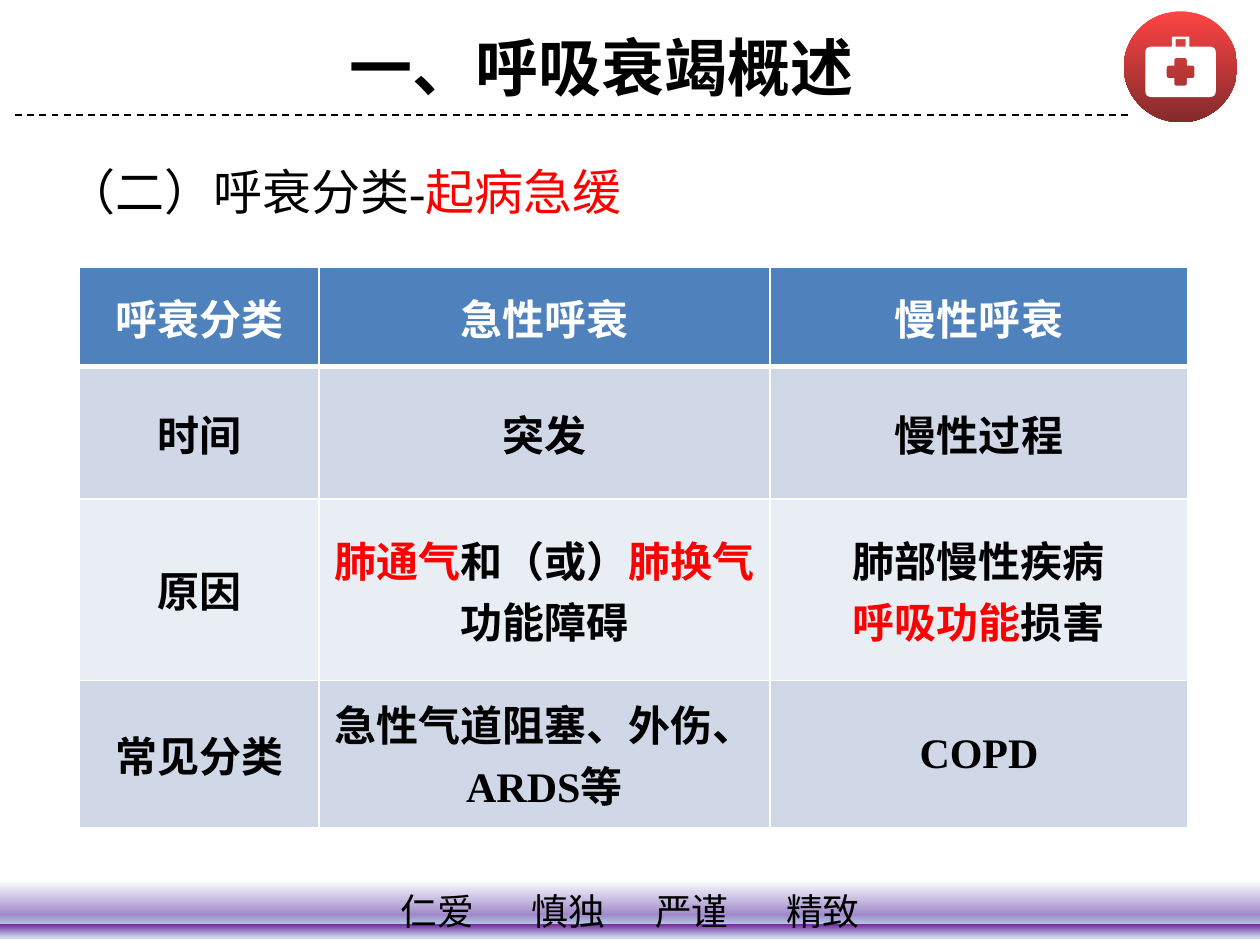
"""Build the slide that compares acute and chronic respiratory failure."""
import math
from dataclasses import dataclass

import lxml.etree
import pptx
import pptx.dml.color
import pptx.enum.dml
import pptx.enum.shapes
import pptx.enum.text
import pptx.oxml.ns
import pptx.util

Inches = pptx.util.Inches
RGBColor = pptx.dml.color.RGBColor
Align = pptx.enum.text.PP_ALIGN
Anchor = pptx.enum.text.MSO_ANCHOR
Shape = pptx.enum.shapes.MSO_SHAPE
qn = pptx.oxml.ns.qn

BLACK = RGBColor(0x00, 0x00, 0x00)
WHITE = RGBColor(0xFF, 0xFF, 0xFF)
RED = RGBColor(0xFF, 0x00, 0x00)
HEADER_BLUE = RGBColor(0x4F, 0x81, 0xBD)
BAND_DARK = RGBColor(0xD0, 0xD8, 0xE8)
BAND_LIGHT = RGBColor(0xE9, 0xED, 0xF4)
SERIF = "Times New Roman"
SANS = "Noto Sans CJK SC"

FOOTER_STOPS = [
    (0, RGBColor(0xF6, 0xF9, 0xFC)), (58, RGBColor(0x9F, 0x89, 0xC9)),
    (74, RGBColor(0xB0, 0xC6, 0xE1)), (75, RGBColor(0x70, 0x30, 0xA0)),
    (93, RGBColor(0xB7, 0xB5, 0xDE)), (96, RGBColor(0xC3, 0xCB, 0xE8)),
    (98, RGBColor(0xC9, 0xD6, 0xED)), (99, RGBColor(0xCD, 0xDF, 0xF1)),
    (100, RGBColor(0xCA, 0xD9, 0xEB)),
]
BADGE_STOPS = [(0, RGBColor(0xFE, 0x44, 0x44)), (100, RGBColor(0x83, 0x2B, 0x2B))]


@dataclass
class Span:
    text: str
    color: RGBColor = BLACK


@dataclass
class Corner:
    x: float
    y: float
    radius: float = 0


TABLE_ROWS = [
    [[[Span(text, WHITE)]] for text in ("呼衰分类", "急性呼衰", "慢性呼衰")],
    [[[Span(text)]] for text in ("时间", "突发", "慢性过程")],
    [
        [[Span("原因")]],
        [[Span("肺通气", RED), Span("和（或）"), Span("肺换气", RED), Span("功能障碍")]],
        [[Span("肺部慢性疾病")], [Span("呼吸功能", RED), Span("损害")]],
    ],
    [[[Span(text)]] for text in ("常见分类", "急性气道阻塞、外伤、ARDS等", "COPD")],
]
ROW_FILLS = [HEADER_BLUE, BAND_DARK, BAND_LIGHT, BAND_DARK]


def set_all(target, values: dict) -> None:
    for name, value in values.items():
        setattr(target, name, value)


def write(frame, paras: list, size: float, bold: bool = False,
          align=Align.CENTER, font: str = SERIF) -> None:
    for index, spans in enumerate(paras):
        para = frame.add_paragraph() if index else frame.paragraphs[0]
        para.alignment = align
        for item in spans:
            span = para.add_run()
            span.text = item.text
            set_all(span.font, {"size": pptx.util.Pt(size), "bold": bold, "name": font})
            span.font.color.rgb = item.color
            east = lxml.etree.SubElement(span.font._element, qn("a:ea"))
            east.set("typeface", SANS)


def fill_gradient(shape, stops: list) -> None:
    shape.shadow.inherit = False
    shape.line.fill.background()
    shape.fill.gradient()
    shape.fill.gradient_angle = 270
    stop_list = shape._element.spPr.find(".//" + qn("a:gsLst"))
    for old in list(stop_list):
        stop_list.remove(old)
    for position, color in stops:
        stop = lxml.etree.SubElement(stop_list, qn("a:gs"), pos=str(position * 1000))
        lxml.etree.SubElement(stop, qn("a:srgbClr"), val=str(color))


def add_footer(page) -> None:
    bar = page.shapes.add_shape(Shape.RECTANGLE, 0, Inches(7), Inches(10), Inches(0.45))
    fill_gradient(bar, FOOTER_STOPS)
    frame = bar.text_frame
    set_all(frame, {"margin_left": Inches(3.18), "margin_right": 0,
                    "vertical_anchor": Anchor.MIDDLE, "word_wrap": True})
    tabs = lxml.etree.SubElement(frame.paragraphs[0]._p.get_or_add_pPr(), qn("a:tabLst"))
    for position in (1.04, 2.02, 3.06):
        lxml.etree.SubElement(tabs, qn("a:tab"), pos=str(Inches(position)), algn="l")
    write(frame, [[Span("仁爱\t慎独\t严谨\t精致")]], 21, align=Align.LEFT, font=SANS)


def add_rule(page) -> None:
    rule = page.shapes.add_connector(pptx.enum.shapes.MSO_CONNECTOR.STRAIGHT,
                                     Inches(0.12), Inches(0.91), Inches(8.99), Inches(0.91))
    rule.line.color.rgb = BLACK
    set_all(rule.line, {"width": pptx.util.Pt(1),
                        "dash_style": pptx.enum.dml.MSO_LINE.DASH})
    lxml.etree.SubElement(rule._element.spPr, qn("a:effectLst"))


def add_border(cell, side: str, points: float) -> None:
    line = lxml.etree.SubElement(cell._tc.get_or_add_tcPr(), qn("a:" + side),
                                 w=str(pptx.util.Pt(points)))
    fill = lxml.etree.SubElement(line, qn("a:solidFill"))
    lxml.etree.SubElement(fill, qn("a:srgbClr"), val=str(WHITE))


def add_comparison(page) -> None:
    table = page.shapes.add_table(4, 3, Inches(0.63), Inches(2.12),
                                  Inches(8.8), Inches(4.45)).table
    for column, width in zip(table.columns, (1.9, 3.58, 3.32)):
        column.width = Inches(width)
    for row, height in zip(table.rows, (0.79, 1.05, 1.44, 1.17)):
        row.height = Inches(height)
    for row, contents in enumerate(TABLE_ROWS):
        for column, paras in enumerate(contents):
            cell = table.cell(row, column)
            cell.vertical_anchor = Anchor.MIDDLE
            write(cell.text_frame, paras, 24, bold=True)
            for side in ("lnL", "lnR", "lnT", "lnB"):
                thick = (row, side) in ((0, "lnB"), (1, "lnT"))
                add_border(cell, side, 3 if thick else 1)
            cell.fill.solid()
            cell.fill.fore_color.rgb = ROW_FILLS[row]


def round_outline(corners: list, steps: int = 4) -> list:
    points = []
    for index, corner in enumerate(corners):
        near = [corners[index - 1], corners[(index + 1) % len(corners)]]
        ends = []
        for other in near:
            share = corner.radius / math.hypot(other.x - corner.x, other.y - corner.y)
            ends.append((corner.x + (other.x - corner.x) * share,
                         corner.y + (other.y - corner.y) * share))
        for step in range(steps + 1 if corner.radius else 1):
            t = step / steps
            weights = ((1 - t) ** 2, 2 * t * (1 - t), t ** 2)
            points.append(tuple(
                Inches(sum(w * v for w, v in zip(weights, axis)))
                for axis in zip(ends[0], (corner.x, corner.y), ends[1])))
    return points


def add_badge(page) -> None:
    disc = page.shapes.add_shape(Shape.OVAL, Inches(8.92), Inches(0.09),
                                 Inches(0.9), Inches(0.88))
    fill_gradient(disc, BADGE_STOPS)
    case = [Corner(9.09, 0.37, 0.05), Corner(9.3, 0.37), Corner(9.3, 0.29),
            Corner(9.44, 0.29), Corner(9.44, 0.37), Corner(9.65, 0.37, 0.05),
            Corner(9.65, 0.77, 0.05), Corner(9.09, 0.77, 0.05)]
    handle = [Corner(9.33, 0.31), Corner(9.33, 0.37), Corner(9.41, 0.37), Corner(9.41, 0.31)]
    cross = [Corner(9.37 + x, 0.57 + y, 0 if abs(x) == abs(y) else 0.02)
             for x, y in ((-0.05, -0.11), (-0.05, -0.05), (-0.11, -0.05), (-0.11, 0.05),
                          (-0.05, 0.05), (-0.05, 0.11), (0.05, 0.11), (0.05, 0.05),
                          (0.11, 0.05), (0.11, -0.05), (0.05, -0.05), (0.05, -0.11))]
    outlines = [round_outline(corners) for corners in (case, handle, cross)]
    builder = page.shapes.build_freeform(*outlines[0][0])
    for index, points in enumerate(outlines):
        if index:
            builder.move_to(*points[0])
        builder.add_line_segments(points[1:], close=True)
    kit = builder.convert_to_shape()
    kit.shadow.inherit = False
    kit.line.fill.background()
    kit.fill.solid()
    kit.fill.fore_color.rgb = WHITE


def main() -> None:
    deck = pptx.Presentation()
    set_all(deck, {"slide_width": Inches(10), "slide_height": Inches(7.5)})
    page = deck.slides.add_slide(deck.slide_layouts[5])
    add_footer(page)
    add_rule(page)
    box = page.shapes.add_textbox(Inches(0.43), Inches(1.23), Inches(7.13), Inches(0.57))
    box.text_frame.word_wrap = True
    write(box.text_frame, [[Span("（二）呼衰分类-"), Span("起病急缓", RED)]], 28,
          align=Align.LEFT)
    title = page.shapes.title
    set_all(title, {"left": Inches(2.4), "top": Inches(0.29),
                    "width": Inches(4.74), "height": Inches(0.47)})
    set_all(title.text_frame, {"vertical_anchor": Anchor.MIDDLE, "word_wrap": True,
                               "auto_size": pptx.enum.text.MSO_AUTO_SIZE.NONE})
    write(title.text_frame, [[Span("一、呼吸衰竭概述")]], 36, bold=True)
    add_comparison(page)
    add_badge(page)
    deck.save("out.pptx")


if __name__ == "__main__":
    main()
